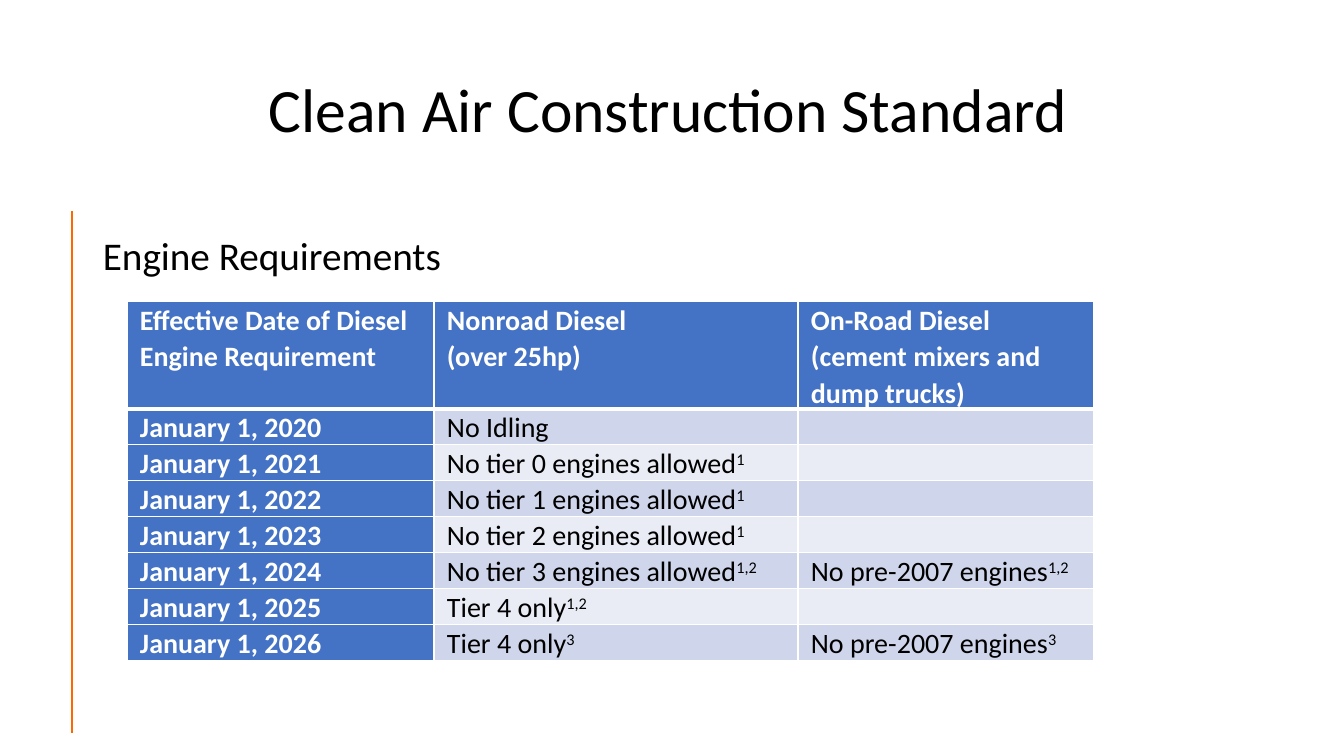
"""Build the Clean Air Construction Standard slide with its table of engine requirements."""
from lxml.etree import SubElement
from pptx import Presentation
from pptx.dml.color import RGBColor
from pptx.enum.shapes import MSO_CONNECTOR as Connector
from pptx.enum.text import MSO_ANCHOR as Anchor
from pptx.oxml.ns import qn
from pptx.util import Pt

PX = 914400 * 10 // 1008
BLACK = RGBColor(0x00, 0x00, 0x00)
WHITE = RGBColor(0xFF, 0xFF, 0xFF)
ORANGE = RGBColor(0xFF, 0x68, 0x01)
BLUE = RGBColor(0x44, 0x72, 0xC4)
BAND_DARK = RGBColor(0xCF, 0xD5, 0xEA)
BAND_LIGHT = RGBColor(0xE9, 0xEB, 0xF5)


def write(frame, text, size, color=BLACK, bold=False, spacing=0.9):
    """Fill a text frame; newlines split paragraphs and ^ starts a superscript."""
    frame.word_wrap = True
    for index, line in enumerate(text.split("\n")):
        para = frame.paragraphs[0] if index == 0 else frame.add_paragraph()
        para.line_spacing = spacing
        for part, words in enumerate(line.split("^")):
            span = para.add_run()
            span.text = words
            span.font.name = "Calibri"
            span.font.size = Pt(size)
            span.font.bold = bold
            span.font.color.rgb = color
            if part:
                span.font._element.set("baseline", "30000")


def add_border(cell, side, points):
    """Draw a white border on one side of a table cell."""
    edge = SubElement(cell._tc.get_or_add_tcPr(), qn(f"a:ln{side}"), w=str(Pt(points)))
    fill = SubElement(edge, qn("a:solidFill"))
    SubElement(fill, qn("a:srgbClr"), val=str(WHITE))


deck = Presentation()
deck.slide_width = 1344 * PX
deck.slide_height = 756 * PX
page = deck.slides.add_slide(deck.slide_layouts[6])

rule = page.shapes.add_connector(Connector.STRAIGHT, 72 * PX, 211 * PX, 72 * PX, 733 * PX)
rule.line.color.rgb = ORANGE
rule.line.width = Pt(2)
SubElement(rule._element.spPr, qn("a:effectLst"))

title = page.shapes.add_textbox(259 * PX, 40 * PX, 993 * PX, 146 * PX)
title.text_frame.vertical_anchor = Anchor.MIDDLE
write(title.text_frame, "Clean Air Construction Standard", size=44)

subtitle = page.shapes.add_textbox(93 * PX, 232 * PX, 1159 * PX, 456 * PX)
write(subtitle.text_frame, "Engine Requirements", size=28)

requirements = [
    ("Effective Date of Diesel Engine Requirement", "Nonroad Diesel\n(over 25hp)",
     "On-Road Diesel\n(cement mixers and dump trucks)"),
    ("January 1, 2020", "No Idling", ""),
    ("January 1, 2021", "No tier 0 engines allowed^1", ""),
    ("January 1, 2022", "No tier 1 engines allowed^1", ""),
    ("January 1, 2023", "No tier 2 engines allowed^1", ""),
    ("January 1, 2024", "No tier 3 engines allowed^1,2", "No pre-2007 engines^1,2"),
    ("January 1, 2025", "Tier 4 only^1,2", ""),
    ("January 1, 2026", "Tier 4 only^3", "No pre-2007 engines^3"),
]
widths = [307, 364, 296]
table = page.shapes.add_table(len(requirements), len(widths), 127 * PX, 301 * PX,
                              sum(widths) * PX, 347 * PX).table
for column, width in zip(table.columns, widths):
    column.width = width * PX

for row, texts in enumerate(requirements):
    table.rows[row].height = (34 if row else 106) * PX
    for col, text in enumerate(texts):
        cell = table.cell(row, col)
        cell.margin_left = cell.margin_right = 13 * PX
        cell.margin_top = cell.margin_bottom = 0
        add_border(cell, "L", 1)
        add_border(cell, "R", 1)
        add_border(cell, "T", 3 if row == 1 else 1)
        add_border(cell, "B", 3 if row == 0 else 1)
        heading = row == 0 or col == 0
        cell.fill.solid()
        cell.fill.fore_color.rgb = BLUE if heading else BAND_DARK if row % 2 else BAND_LIGHT
        if text:
            write(cell.text_frame, text, size=20, color=WHITE if heading else BLACK,
                  bold=heading, spacing=1.07)

deck.save("out.pptx")
